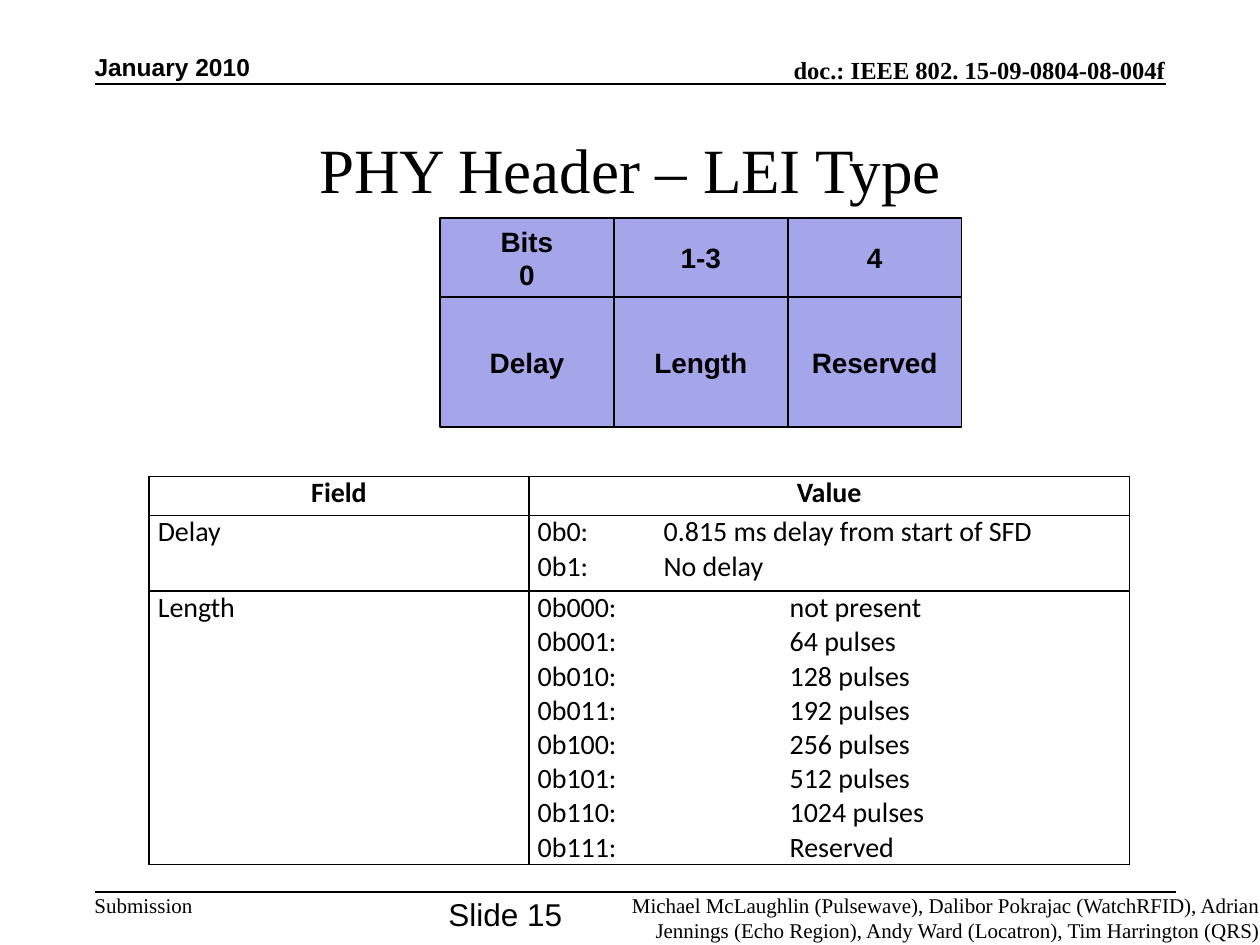
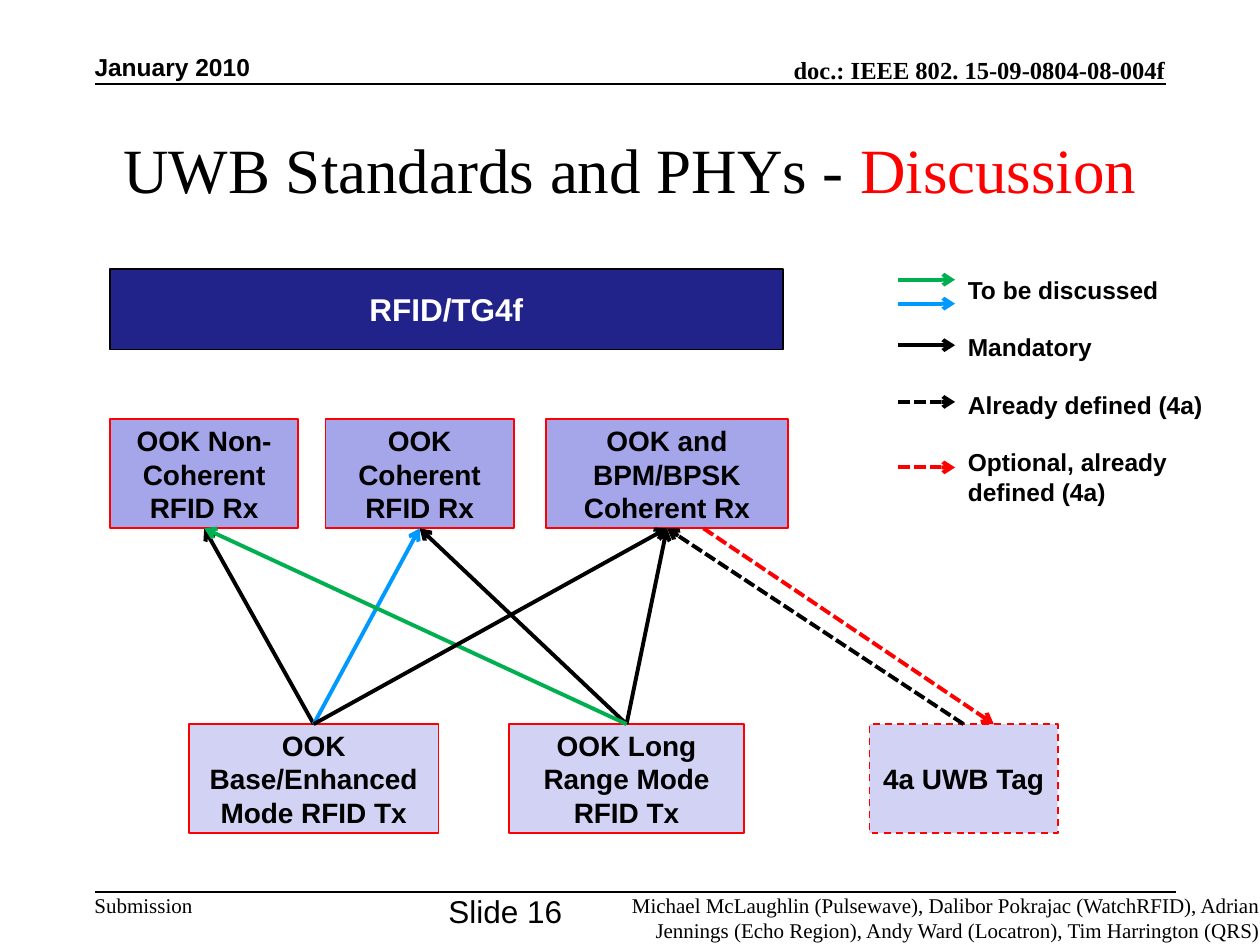
from pptx import Presentation
from pptx.dml.color import RGBColor
from pptx.enum.dml import MSO_LINE as Dash
from pptx.enum.shapes import MSO_CONNECTOR, MSO_SHAPE
from pptx.enum.text import MSO_ANCHOR as Anchor, PP_ALIGN as Align
from pptx.oxml.ns import qn
from pptx.util import Inches, Pt
from lxml.etree import SubElement

BLACK = RGBColor(0x00, 0x00, 0x00)
WHITE = RGBColor(0xFF, 0xFF, 0xFF)
RED = RGBColor(0xFF, 0x00, 0x00)
GREEN = RGBColor(0x00, 0xB0, 0x50)
BLUE = RGBColor(0x00, 0x99, 0xFF)
NAVY = RGBColor(0x22, 0x22, 0x8B)
LILAC = RGBColor(0xA5, 0xA5, 0xE9)
PALE_LILAC = RGBColor(0xD2, 0xD2, 0xF4)
SERIF, SANS, TABLE_FONT = "Times New Roman", "Arial", "Calibri"

deck = Presentation()
deck.slide_width, deck.slide_height = Inches(10), Inches(7.5)
COL = deck.slide_width / 100
ROW = deck.slide_height / 75


def put_text(slide, area, text, size, font=SANS, bold=False, color=BLACK, align=Align.LEFT,
             anchor=Anchor.TOP, inset=(0, 0), fill=None, outline=BLACK, dash=None):
    left, top, width, height = area
    frame = int(left * COL), int(top * ROW), int(width * COL), int(height * ROW)
    if fill is None:
        holder = slide.shapes.add_textbox(*frame)
    else:
        holder = slide.shapes.add_shape(MSO_SHAPE.RECTANGLE, *frame)
        holder.shadow.inherit = False
        holder.fill.solid()
        holder.fill.fore_color.rgb = fill
        holder.line.color.rgb = outline
        holder.line.width = Pt(1)
        if dash:
            holder.line.dash_style = dash
        align, anchor, inset = Align.CENTER, Anchor.MIDDLE, (1, 0.5)
    body = holder.text_frame
    body.text = text
    body.word_wrap = True
    body.vertical_anchor = anchor
    body.margin_left = body.margin_right = int(inset[0] * COL)
    body.margin_top = body.margin_bottom = int(inset[1] * ROW)
    for paragraph in body.paragraphs:
        paragraph.alignment = align
        for run in paragraph.runs:
            run.font.name, run.font.size, run.font.bold = font, Pt(size), bold
            run.font.color.rgb = color
    return body


def put_line(slide, start, end, color=BLACK, weight=1, dash=None, arrow=False):
    link = slide.shapes.add_connector(
        MSO_CONNECTOR.STRAIGHT, int(start[0] * COL), int(start[1] * ROW),
        int(end[0] * COL), int(end[1] * ROW))
    link.line.color.rgb = color
    link.line.width = Pt(weight)
    if dash:
        link.line.dash_style = dash
    if arrow:
        SubElement(link.line._get_or_add_ln(), qn("a:tailEnd"), type="arrow")
    SubElement(link._element.spPr, qn("a:effectLst"))


AUTHORS = ("Michael McLaughlin (Pulsewave), Dalibor Pokrajac (WatchRFID), Adrian "
           "Jennings (Echo Region), Andy Ward (Locatron), Tim Harrington (QRS)")

slides = []
for number, number_top, heading in ((15, 71, "PHY Header – LEI Type"),
                                    (16, 70.8, "UWB Standards and PHYs - ")):
    slide = deck.slides.add_slide(deck.slide_layouts[6])
    put_text(slide, (7.5, 4.1, 17.5, 2.4), "January 2010", 14, bold=True, anchor=Anchor.BOTTOM)
    put_text(slide, (40.1, 4.3, 52.4, 2.4), "doc.: IEEE 802. 15-09-0804-08-004f", 14, SERIF,
             bold=True, align=Align.RIGHT, anchor=Anchor.BOTTOM)
    put_line(slide, (7.5, 6.65), (92.5, 6.65))
    title = put_text(slide, (7.5, 7.5, 85, 11.7), heading, 36, SERIF, align=Align.CENTER,
                     anchor=Anchor.MIDDLE, inset=(1, 0.5))
    put_line(slide, (7.5, 70.8), (93.3, 70.8))
    put_text(slide, (7.5, 70.8, 10, 2), "Submission", 12, SERIF)
    put_text(slide, (35.1, number_top, 10, 2.8), f"Slide {number}", 18, align=Align.CENTER)
    put_text(slide, (47.9, 70.8, 52.1, 4), AUTHORS, 12, SERIF, align=Align.RIGHT)
    slides.append(slide)
header_slide, phy_slide = slides

discussion = title.paragraphs[0].add_run()
discussion.text = "Discussion"
discussion.font.name, discussion.font.size = SERIF, Pt(36)
discussion.font.color.rgb = RED

BIT_WIDTH = 13.8
for index, (bits, field) in enumerate((("Bits\n0", "Delay"), ("1-3", "Length"), ("4", "Reserved"))):
    left = 34.92 + index * BIT_WIDTH
    put_text(header_slide, (left, 17.3, BIT_WIDTH, 6.3), bits, 16, bold=True, fill=LILAC)
    put_text(header_slide, (left, 23.6, BIT_WIDTH, 10.3), field, 16, bold=True, fill=LILAC)

pulses = ("not present", "64 pulses", "128 pulses", "192 pulses",
          "256 pulses", "512 pulses", "1024 pulses", "Reserved")
field_values = (
    ("Field", "Value"),
    ("Delay", "0b0:\t0.815 ms delay from start of SFD\n0b1:\tNo delay"),
    ("Length", "\n".join(f"0b{code:03b}:\t\t{meaning}" for code, meaning in enumerate(pulses))),
)
values_table = header_slide.shapes.add_table(
    3, 2, int(11.83 * COL), int(37.8 * ROW), int(77.8 * COL), int(30.8 * ROW)).table
values_table.first_row = values_table.horz_banding = False
for column, width in zip(values_table.columns, (30.15, 47.65)):
    column.width = int(width * COL)
for row, height in zip(values_table.rows, (3.1, 6, 21.7)):
    row.height = int(height * ROW)
for row_index, texts in enumerate(field_values):
    for column_index, text in enumerate(texts):
        cell = values_table.cell(row_index, column_index)
        cell.text_frame.text = text
        cell.margin_left = cell.margin_right = int(0.7 * COL)
        cell.margin_top = cell.margin_bottom = 0
        for side in ("a:lnL", "a:lnR", "a:lnT", "a:lnB"):
            border = SubElement(cell._tc.get_or_add_tcPr(), qn(side), w=str(Pt(1)))
            SubElement(SubElement(border, qn("a:solidFill")), qn("a:srgbClr"), val=str(BLACK))
        cell.fill.background()
        for paragraph in cell.text_frame.paragraphs:
            if "\t" in text:
                tabs = SubElement(paragraph._p.get_or_add_pPr(), qn("a:tabLst"))
                for stop in (1, 2):
                    SubElement(tabs, qn("a:tab"), pos=str(Inches(stop)), algn="l")
            paragraph.alignment = Align.LEFT if row_index else Align.CENTER
            for run in paragraph.runs:
                run.font.name, run.font.size = TABLE_FONT, Pt(16)
                run.font.bold = row_index == 0
                run.font.color.rgb = BLACK

put_text(phy_slide, (8.73, 21.35, 53.4, 6.4), "RFID/TG4f", 18, bold=True, color=WHITE, fill=NAVY)

RX_TOP, TX_TOP, NODE_HEIGHT = 33.28, 57.47, 8.65
RX_BOTTOM = RX_TOP + NODE_HEIGHT
receivers = (
    (8.73, 14.95, "OOK Non-Coherent RFID Rx"),
    (25.83, 14.95, "OOK Coherent RFID Rx"),
    (43.33, 19.2, "OOK and BPM/BPSK Coherent Rx"),
)
transmitters = (
    (15, 19.8, "OOK Base/Enhanced Mode RFID Tx", None),
    (40.43, 18.6, "OOK Long Range Mode RFID Tx", None),
    (69, 14.95, "4a UWB Tag", Dash.DASH),
)
for left, width, name in receivers:
    put_text(phy_slide, (left, RX_TOP, width, NODE_HEIGHT), name, 16, bold=True,
             fill=LILAC, outline=RED)
for left, width, name, dash in transmitters:
    put_text(phy_slide, (left, TX_TOP, width, NODE_HEIGHT), name, 16, bold=True,
             fill=PALE_LILAC, outline=RED, dash=dash)

non_coherent, coherent, combined = [left + width / 2 for left, width, _ in receivers]
base, long_range, uwb_tag = [left + width / 2 for left, width, _, _ in transmitters]
for source, target, color, dash in (
    (base, non_coherent, BLACK, None),
    (long_range, coherent, BLACK, None),
    (uwb_tag, combined, BLACK, Dash.SQUARE_DOT),
    (long_range, combined, BLACK, None),
    (base, coherent, BLUE, None),
    (long_range, non_coherent, GREEN, None),
    (base, combined, BLACK, None),
):
    put_line(phy_slide, (source, TX_TOP), (target, RX_BOTTOM), color, 2.25, dash, True)
put_line(phy_slide, (combined + 2.9, RX_BOTTOM), (uwb_tag + 2.4, TX_TOP),
         RED, 2.25, Dash.SQUARE_DOT, True)

for row, color, dash in ((22.2, GREEN, None), (24.1, BLUE, None), (27.4, BLACK, None),
                         (31.9, BLACK, Dash.SQUARE_DOT), (37.1, RED, Dash.SQUARE_DOT)):
    put_line(phy_slide, (71.3, row), (75.8, row), color, 2.25, dash, True)
for index, meaning in enumerate(("To be discussed", "Mandatory", "Already defined (4a)",
                                 "Optional, already defined (4a)")):
    put_text(phy_slide, (75.83, 21.3 + index * 4.57, 21, 3.4), meaning, 14, bold=True,
             inset=(1, 0.5))

deck.save("out.pptx")
